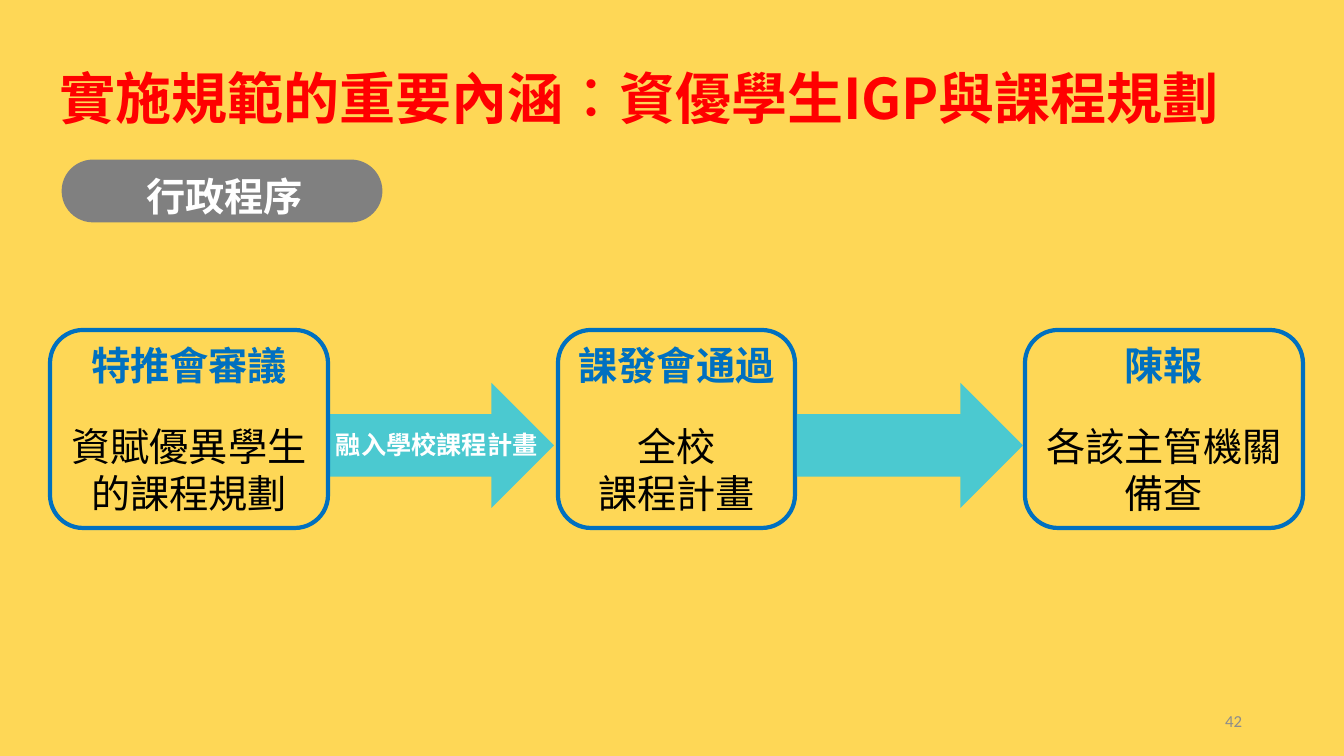
from lxml import etree
from pptx import Presentation
from pptx import util as u
from pptx.dml.color import RGBColor
from pptx.enum import shapes, text
from pptx.oxml.ns import qn

PX = 9071.43
SHAPE = shapes.MSO_SHAPE
ALIGN = text.PP_ALIGN
ANCHOR = text.MSO_ANCHOR


def px(length):
    """Turn pixels into EMU."""
    return u.Emu(round(length * PX))


def rgb(code):
    """Turn a hex string into a colour."""
    return RGBColor.from_string(code)


class Deck:
    """Holds the style and the current slide."""

    CJK, LATIN = "Noto Sans CJK SC", "Calibri"
    RED, WHITE, BLACK, PALE = "FF0000", "FFFFFF", "000000", "8C8C8C"
    BLUE, GREY, TEAL, GOLD = "0070C0", "808080", "4BC9D0", "FED756"

    def __init__(self):
        self.file = Presentation()
        self.file.slide_width, self.file.slide_height = px(1344), px(756)
        self.slide = self.file.slides.add_slide(self.file.slide_layouts[6])
        self.slide.background.fill.solid()
        self.slide.background.fill.fore_color.rgb = rgb(self.GOLD)

    def shape(self, kind, box, fill=None, line=None, width=0, corner=None):
        """Add a preset shape."""
        item = self.slide.shapes.add_shape(kind, *map(px, box))
        item.shadow.inherit = False
        if fill:
            item.fill.solid()
            item.fill.fore_color.rgb = rgb(fill)
        else:
            item.fill.background()
        if line:
            item.line.color.rgb = rgb(line)
            item.line.width = u.Pt(width)
        else:
            item.line.fill.background()
        if corner is not None:
            item.adjustments[0] = corner
        return item

    def paragraph(self, para, words, size, color, bold=False, font=CJK,
                  align=ALIGN.CENTER, **spacing):
        """Write one formatted paragraph."""
        for key, value in {"alignment": align, **spacing}.items():
            setattr(para, key, value)
        run = para.add_run()
        run.text = words
        style = {"name": font, "size": u.Pt(size), "bold": bold}
        for key, value in style.items():
            setattr(run.font, key, value)
        run.font.color.rgb = rgb(color)
        east = etree.SubElement(run._r.get_or_add_rPr(), qn("a:ea"))
        east.set("typeface", font)

    def label(self, box, words, size, color, margin=None,
              anchor=ANCHOR.TOP, **style):
        """Add a text box of one paragraph."""
        frame = self.slide.shapes.add_textbox(*map(px, box)).text_frame
        layout = {"word_wrap": True, "vertical_anchor": anchor}
        if margin is not None:
            sides = ("left", "top", "right", "bottom")
            layout.update({f"margin_{side}": margin for side in sides})
        for key, value in layout.items():
            setattr(frame, key, value)
        self.paragraph(frame.paragraphs[0], words, size, color, **style)

    def step(self, left, width, heading, *details):
        """Add an outlined step with a heading and details."""
        card = self.shape(SHAPE.ROUNDED_RECTANGLE, (left, 330, width, 198),
                          line=self.BLUE, width=3)
        frame = card.text_frame
        frame.word_wrap = True
        frame.vertical_anchor = ANCHOR.MIDDLE
        self.paragraph(frame.paragraphs[0], heading, 28, self.BLUE, bold=True)
        for index, detail in enumerate(details):
            self.paragraph(frame.add_paragraph(), detail, 28, self.BLACK,
                           space_before=u.Pt(0 if index else 24))

    def arrow(self, left):
        """Add an arrow between two steps."""
        self.shape(SHAPE.RIGHT_ARROW, (left, 383, 226, 125), fill=self.TEAL)


def main():
    """Build the slide."""
    deck = Deck()
    deck.label((50, 59, 1293, 78), "實施規範的重要內涵︰資優學生IGP與課程規劃",
               40, deck.RED, bold=True, align=ALIGN.LEFT)
    deck.shape(SHAPE.ROUNDED_RECTANGLE, (63, 161, 318, 60), fill=deck.GREY,
               line=deck.GREY, width=2, corner=0.5)
    deck.label((80, 172, 289, 47), "行政程序", 28, deck.WHITE, margin=0,
               bold=True)
    deck.arrow(328)
    deck.step(50, 278, "特推會審議", "資賦優異學生", "的課程規劃")
    deck.step(558, 237, "課發會通過", "全校", "課程計畫")
    deck.step(1025, 278, "陳報", "各該主管機關備查")
    deck.label((326, 424, 230, 40), "融入學校課程計畫", 18, deck.WHITE,
               bold=True, align=ALIGN.LEFT)
    deck.arrow(797)
    deck.label((950, 701, 302, 40), "42", 12, deck.PALE, font=deck.LATIN,
               align=ALIGN.RIGHT, anchor=ANCHOR.MIDDLE)
    deck.file.save("out.pptx")


if __name__ == "__main__":
    main()
